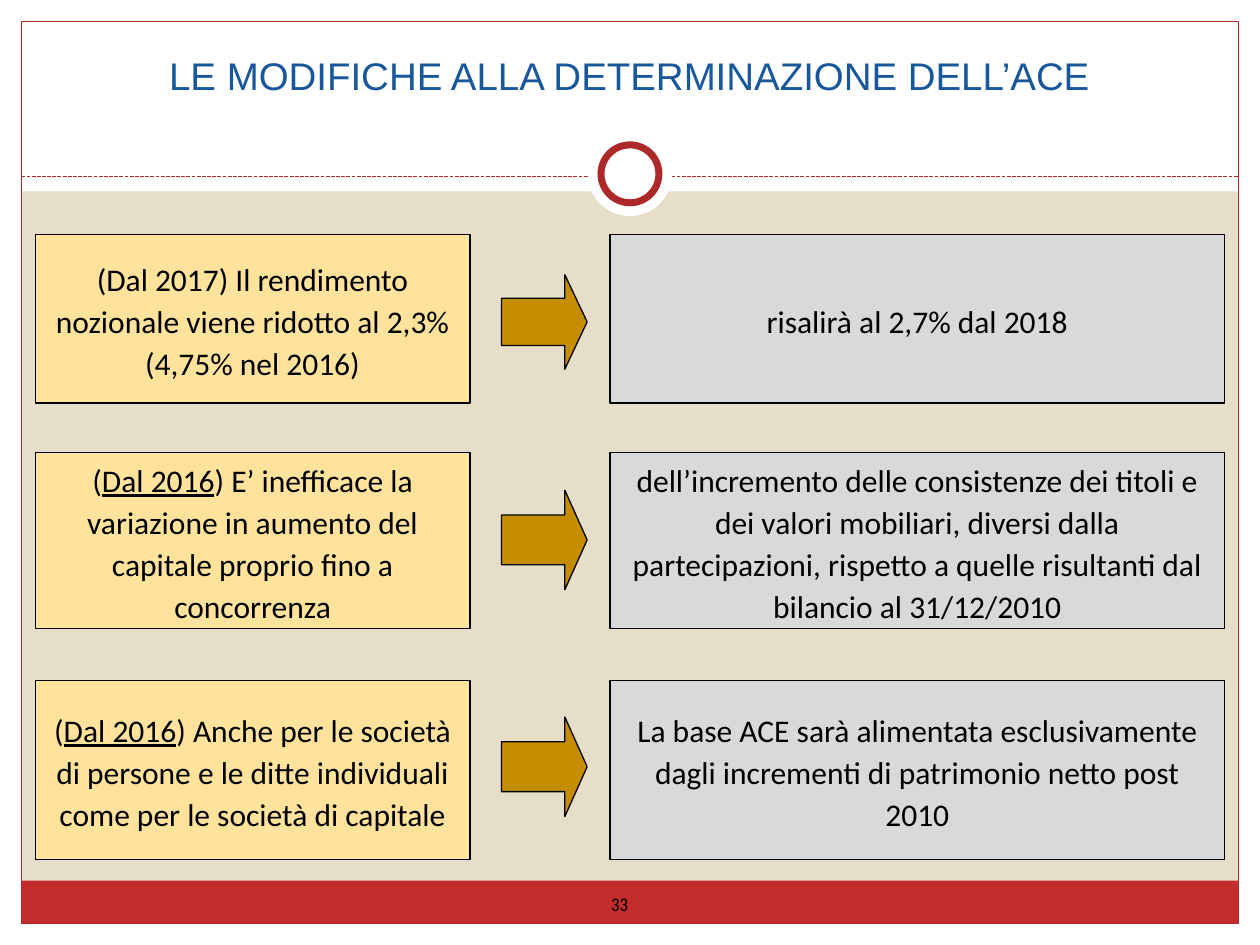
from lxml import etree
from pptx import Presentation
from pptx.dml.color import RGBColor
from pptx.enum.dml import MSO_LINE
from pptx.enum.shapes import MSO_CONNECTOR, MSO_SHAPE
from pptx.enum.text import MSO_ANCHOR, PP_ALIGN
from pptx.oxml.ns import qn
from pptx.util import Inches, Pt

RECT = MSO_SHAPE.RECTANGLE
OVAL = MSO_SHAPE.OVAL
ARROW = MSO_SHAPE.RIGHT_ARROW
STRAIGHT = MSO_CONNECTOR.STRAIGHT
DASH = MSO_LINE.SQUARE_DOT
MIDDLE = MSO_ANCHOR.MIDDLE
TOP = MSO_ANCHOR.TOP
CENTER = PP_ALIGN.CENTER

WHITE = RGBColor(0xFF, 0xFF, 0xFF)
BLACK = RGBColor(0, 0, 0)
SAND = RGBColor(0xE7, 0xDE, 0xC9)
RED = RGBColor(0xC3, 0x2D, 0x2E)
DARK = RGBColor(0xAC, 0x28, 0x29)
YELLOW = RGBColor(0xFF, 0xE3, 0x9D)
GREY = RGBColor(0xD9, 0xD9, 0xD9)
GOLD = RGBColor(0xC5, 0x8D, 0x01)
BLUE = RGBColor(0x18, 0x57, 0x9B)

ROWS = [
    (1.86, 1.34, 2.18, 0.75,
     ["(Dal 2017) Il rendimento nozionale viene ridotto al 2,3% (4,75% nel 2016)"],
     ["risalirà al 2,7% dal 2018"]),
    (3.59, 1.4, 3.89, 0.79,
     ["(", "Dal 2016", ") E’ inefficace la variazione in aumento del capitale "
      "proprio fino a concorrenza"],
     ["dell’incremento delle consistenze dei titoli e dei valori mobiliari, "
      "diversi dalla partecipazioni, rispetto a quelle risultanti dal "
      "bilancio al 31/12/2010"]),
    (5.4, 1.42, 5.69, 0.79,
     ["(", "Dal 2016", ") Anche per le società di persone e le ditte "
      "individuali come per le società di capitale"],
     ["La base ACE sarà alimentata esclusivamente dagli incrementi di "
      "patrimonio netto post 2010"]),
]


def style(font, name, size, color):
    """Set the face, size and colour of a font."""
    font.name = name
    font.size = Pt(size)
    font.color.rgb = color


def draw(slide, kind, box, fill=None, line=None, width=0.75):
    """Add a flat shape in a box given in inches."""
    shape = slide.shapes.add_shape(kind, *map(Inches, box))
    shape.shadow.inherit = False
    if fill is None:
        shape.fill.background()
    else:
        shape.fill.solid()
        shape.fill.fore_color.rgb = fill
    if line is None:
        shape.line.fill.background()
    else:
        shape.line.color.rgb = line
        shape.line.width = Pt(width)
    return shape


def add_frame(slide, box):
    """Draw the white margins, red band, border, dashed rule and ring."""
    left, top, wide, high = box
    right, base = left + wide, top + high
    for margin in [(0, base, 10, 7.5 - base), (0, 0, 10, 1.52),
                   (0, 0, left, 7.5), (right, 0, 10 - right, 7.5)]:
        draw(slide, RECT, margin, WHITE)
    draw(slide, RECT, (left, base - 0.34, wide, 0.34), RED)
    draw(slide, RECT, box, line=DARK)
    rule = slide.shapes.add_connector(
        STRAIGHT, Inches(left), Inches(1.4), Inches(right), Inches(1.4))
    rule.line.color.rgb = DARK
    rule.line.width = Pt(0.75)
    rule.line.dash_style = DASH
    etree.SubElement(rule._element.spPr, qn("a:effectLst"))
    for size, line in [(0.67, None), (0.46, DARK)]:
        ring = (5 - size / 2, 1.38 - size / 2, size, size)
        draw(slide, OVAL, ring, WHITE, line, 4)


def add_title(slide, box):
    """Place and format the title."""
    title = slide.shapes.title
    title.left, title.top, title.width, title.height = map(Inches, box)
    frame = title.text_frame
    frame.text = "LE MODIFICHE ALLA DETERMINAZIONE DELL’ACE"
    frame.vertical_anchor = TOP
    para = frame.paragraphs[0]
    para.alignment = CENTER
    style(para.runs[0].font, "Arial", 22, BLUE)


def add_card(slide, box, fill, parts):
    """Draw a text card whose every second part is underlined."""
    frame = draw(slide, RECT, box, fill, BLACK).text_frame
    frame.word_wrap = True
    frame.vertical_anchor = MIDDLE
    para = frame.paragraphs[0]
    para.alignment = CENTER
    para.line_spacing = Pt(24)
    for index, part in enumerate(parts):
        run = para.add_run()
        run.text = part
        style(run.font, "Calibri", 18, BLACK)
        if index % 2:
            run.font.underline = True


def add_row(slide, box, tip, rise, cause, effect):
    """Draw a cause card, an arrow and an effect card in one row."""
    left, top, wide, high = box
    add_card(slide, (left, top, 3.45, high), YELLOW, cause)
    add_card(slide, (left + wide - 4.88, top, 4.88, high), GREY, effect)
    arrow = draw(slide, ARROW, (left + 3.7, tip, 0.68, rise), GOLD, BLACK)
    arrow.adjustments[1] = 0.26


def add_number(slide, box):
    """Write the page number."""
    frame = slide.shapes.add_textbox(*map(Inches, box)).text_frame
    frame.word_wrap = True
    frame.vertical_anchor = MIDDLE
    frame.text = "33"
    para = frame.paragraphs[0]
    para.alignment = CENTER
    style(para.runs[0].font, "Roboto Condensed", 10, BLACK)


def main():
    """Build and save the slide."""
    deck = Presentation()
    deck.slide_width = Inches(10)
    deck.slide_height = Inches(7.5)
    slide = deck.slides.add_slide(deck.slide_layouts[5])
    slide.background.fill.solid()
    slide.background.fill.fore_color.rgb = SAND
    add_frame(slide, (0.17, 0.17, 9.66, 7.16))
    add_title(slide, (0.35, 0.36, 9.29, 0.55))
    title = slide.shapes.title._element
    title.getparent().append(title)
    for top, high, tip, rise, cause, effect in ROWS:
        add_row(slide, (0.28, top, 9.44, high), tip, rise, cause, effect)
    add_number(slide, (4.61, 6.98, 0.62, 0.39))
    deck.save("out.pptx")


if __name__ == "__main__":
    main()
